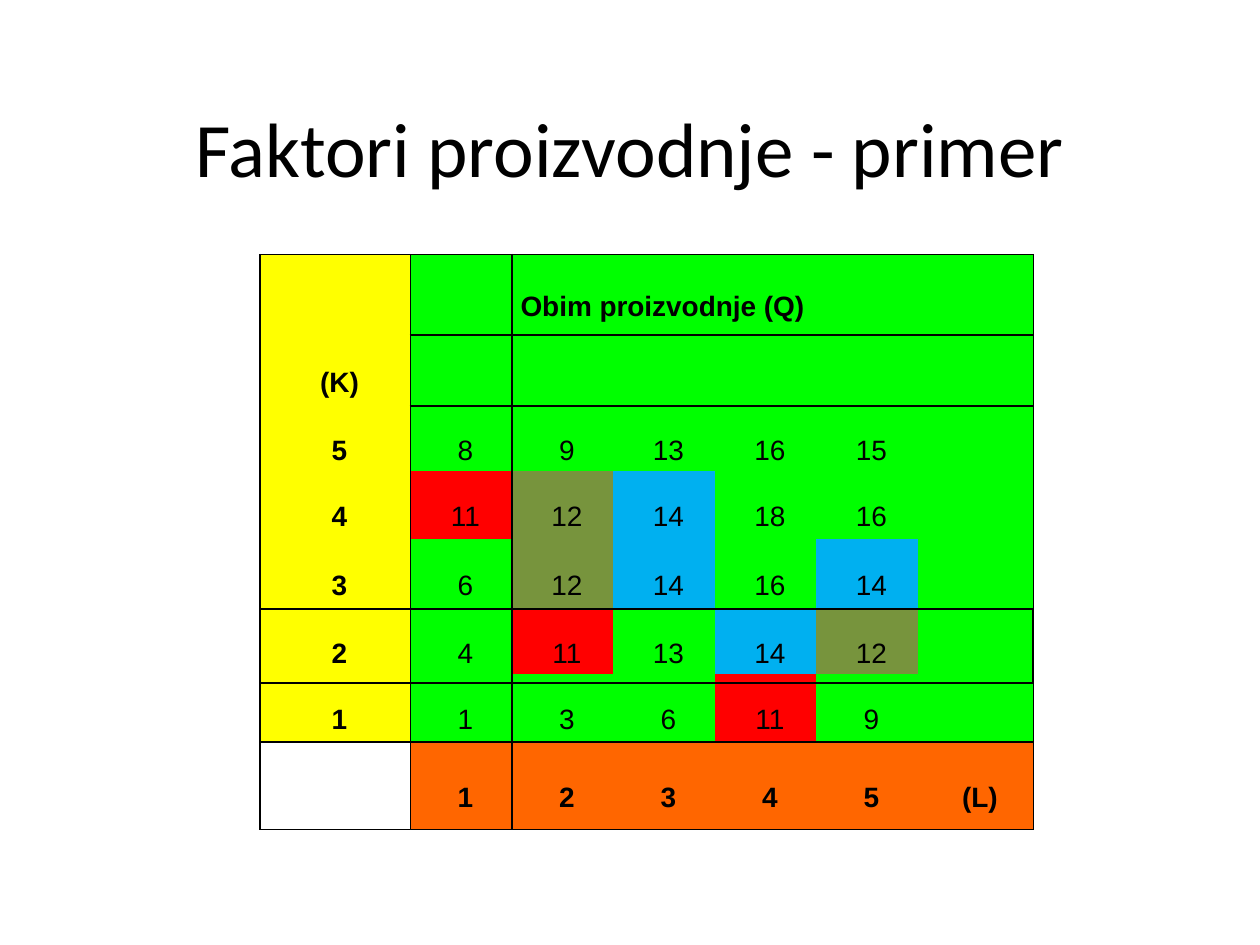
from lxml.etree import SubElement
from pptx import Presentation
from pptx.dml.color import RGBColor
from pptx.enum.shapes import MSO_SHAPE as Shape
from pptx.enum.text import MSO_ANCHOR as Anchor, PP_ALIGN as Align
from pptx.oxml.ns import qn
from pptx.util import Pt

# Content: capital (K) down the side, labour (L) along the bottom
TITLE = "Faktori proizvodnje - primer"
ROWS = [
    ["", "", "Obim proizvodnje (Q)", "", "", "", ""],
    ["(K)", "", "", "", "", "", ""],
    ["5", "8", "9", "13", "16", "15", ""],
    ["4", "11", "12", "14", "18", "16", ""],
    ["3", "6", "12", "14", "16", "14", ""],
    ["2", "4", "11", "13", "14", "12", ""],
    ["1", "1", "3", "6", "11", "9", ""],
    ["", "1", "2", "3", "4", "5", "(L)"],
]

# Colours: equal outputs share a colour
BLACK, YELLOW, GREEN, ORANGE = "000000", "FFFF00", "00FF00", "FF6600"
OUTPUT_COLOURS = {"11": "FF0000", "12": "77943D", "14": "00B0F0"}

# Geometry in points
TABLE_LEFT, TABLE_TOP = 148.5, 145.5
COLUMN_WIDTHS = [86] + [58] * 5 + [66]
ROW_HEIGHTS = [46, 40.5, 37, 39, 40, 37, 39, 50]
LAST_ROW, LAST_COLUMN = len(ROWS) - 1, len(COLUMN_WIDTHS) - 1
NO_STYLE = "{2D5ABB26-0587-4C30-8999-92F81FD0307C}"


def colour(hex_text):
    return RGBColor.from_string(hex_text)


def add_run(paragraph, text, font_name, size, bold=False):
    run = paragraph.add_run()
    run.text = text
    run.font.name, run.font.size, run.font.bold = font_name, Pt(size), bold
    run.font.color.rgb = colour(BLACK)


def cell_fill(row, column):
    if row == LAST_ROW:
        return ORANGE if column else None
    if column == 0:
        return YELLOW
    return OUTPUT_COLOURS.get(ROWS[row][column], GREEN)


def cell_borders(row, column):
    """Sides with a line, in the order the schema asks for."""
    rules = {
        "L": column in (0, 1),
        "R": column in (0, LAST_COLUMN),
        "T": row in (0, LAST_ROW) or (row == 1 and column > 0),
        "B": row >= LAST_ROW - 1 or (row == 0 and column > 0),
    }
    return [side for side, drawn in rules.items() if drawn]


def add_border(cell, side):
    properties = cell._tc.get_or_add_tcPr()
    line = SubElement(properties, qn(f"a:ln{side}"), w=str(Pt(1)))
    fill = SubElement(line, qn("a:solidFill"))
    SubElement(fill, qn("a:srgbClr"), val=BLACK)


def format_cell(cell, row, column):
    for side in cell_borders(row, column):
        add_border(cell, side)
    fill = cell_fill(row, column)
    if fill:
        cell.fill.solid()
        cell.fill.fore_color.rgb = colour(fill)
    else:
        cell.fill.background()
    cell.margin_left = cell.margin_top = Pt(5)
    cell.margin_right = cell.margin_bottom = 0
    cell.vertical_anchor = Anchor.MIDDLE
    text = ROWS[row][column]
    if text:
        paragraph = cell.text_frame.paragraphs[0]
        paragraph.alignment = Align.LEFT if row == 0 else Align.CENTER
        paragraph.line_spacing = 1.5
        bold = column == 0 or row in (0, LAST_ROW)
        add_run(paragraph, text, "Arial", 16, bold)


def add_output_table(slide):
    frame = slide.shapes.add_table(
        len(ROWS), len(COLUMN_WIDTHS), Pt(TABLE_LEFT), Pt(TABLE_TOP),
        Pt(sum(COLUMN_WIDTHS)), Pt(sum(ROW_HEIGHTS)))
    table = frame.table
    table.first_row = table.horz_banding = False
    table._tbl.tblPr.find(qn("a:tableStyleId")).text = NO_STYLE
    for column, width in zip(table.columns, COLUMN_WIDTHS):
        column.width = Pt(width)
    for row, height in zip(table.rows, ROW_HEIGHTS):
        row.height = Pt(height)
    for row in range(len(ROWS)):
        for column in range(len(COLUMN_WIDTHS)):
            format_cell(table.cell(row, column), row, column)
    table.cell(0, 2).merge(table.cell(0, 5))


def main():
    presentation = Presentation()
    presentation.slide_width, presentation.slide_height = Pt(720), Pt(540)
    slide = presentation.slides.add_slide(presentation.slide_layouts[5])

    # Title
    title = slide.shapes.title
    title.left, title.top, title.width, title.height = Pt(54), Pt(26), Pt(612), Pt(116)
    title.text_frame.vertical_anchor = Anchor.MIDDLE
    paragraph = title.text_frame.paragraphs[0]
    paragraph.alignment = Align.CENTER
    add_run(paragraph, TITLE, "Calibri", 44)

    # Table
    add_output_table(slide)

    # Outline around the row K = 2
    outline = slide.shapes.add_shape(
        Shape.RECTANGLE, Pt(TABLE_LEFT), Pt(TABLE_TOP + sum(ROW_HEIGHTS[:5])),
        Pt(sum(COLUMN_WIDTHS)), Pt(42.5))
    outline.shadow.inherit = False
    outline.fill.background()
    outline.line.color.rgb = colour(BLACK)
    outline.line.width = Pt(1)

    presentation.save("out.pptx")


if __name__ == "__main__":
    main()
